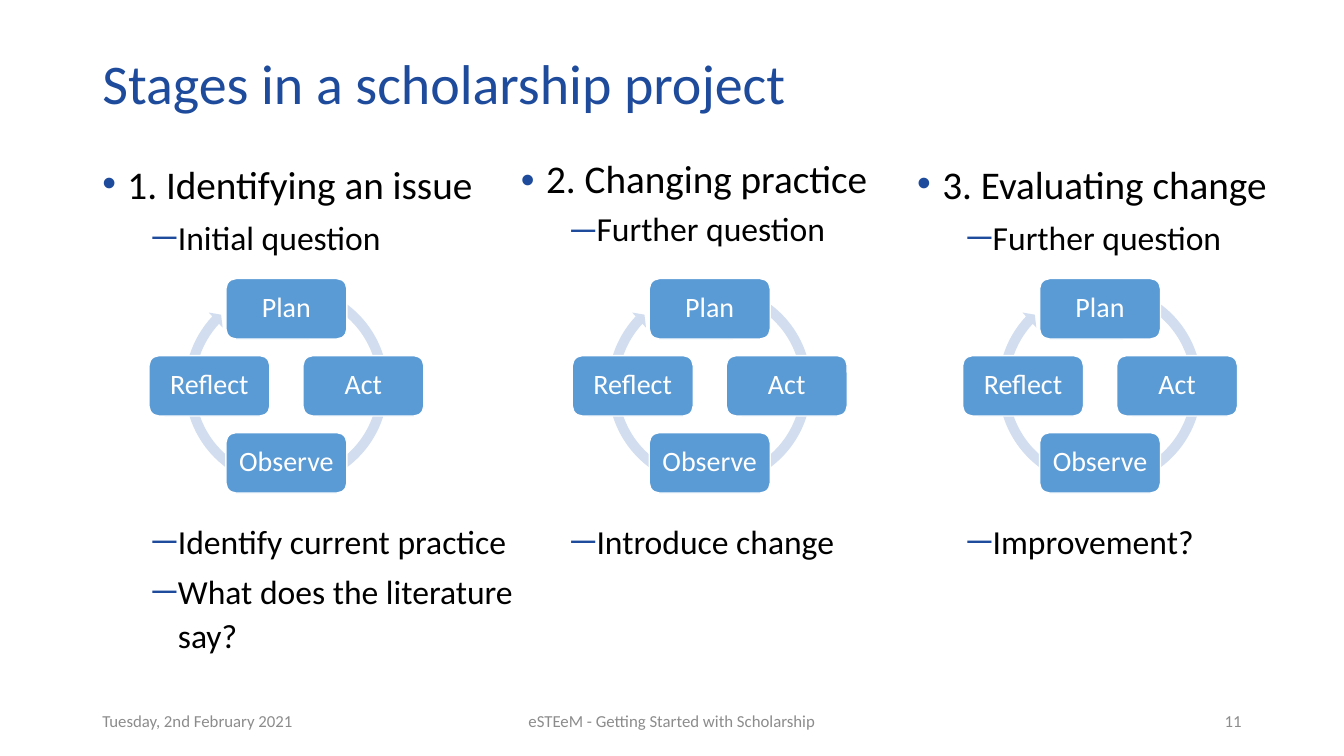
from dataclasses import dataclass

from lxml.etree import SubElement
from pptx import Presentation
from pptx.dml.color import RGBColor as RGB
from pptx.enum.shapes import MSO_SHAPE as SHAPE
from pptx.enum.text import MSO_ANCHOR as ANCHOR, PP_ALIGN as ALIGN
from pptx.oxml.ns import qn
from pptx.util import Pt


@dataclass(frozen=True)
class Theme:
    """Colours, font and type sizes of the slide."""
    font: str = "Calibri"
    blue: str = "1E4B9B"
    text: str = "000000"
    footer: str = "8C8C8C"
    node: str = "5B9BD5"
    ring: str = "D2DEEF"
    white: str = "FFFFFF"
    title_size: float = 40
    head_size: float = 28
    item_size: float = 24
    node_size: float = 20
    footer_size: float = 12


@dataclass(frozen=True)
class Box:
    """Position and size in points."""
    left: float
    top: float
    width: float
    height: float

    def lengths(self) -> tuple:
        """Return the four values as lengths."""
        return Pt(self.left), Pt(self.top), Pt(self.width), Pt(self.height)


@dataclass(frozen=True)
class Bullet:
    """Look of one outline level."""
    char: str
    indent: float
    before: float
    size: float


@dataclass(frozen=True)
class Stage:
    """One column: heading, question, cycle and closing items."""
    head: str
    question: str
    items: tuple
    head_box: Box
    items_box: Box
    cycle_x: float
    spacing: float = 1.08


@dataclass(frozen=True)
class Footer:
    """One entry in the footer row."""
    text: str
    left: float
    width: float
    align: ALIGN


@dataclass(frozen=True)
class Node:
    """A cycle step and its direction from the centre."""
    text: str
    dx: int
    dy: int


THEME = Theme()
LEVELS = (Bullet("•", 18, 10, THEME.head_size), Bullet("─", 54, 5, THEME.item_size))
HANGING = 18
CYCLE_Y, RADIUS, RING_SIDE = 275.6, 55, 152.6
NODE_W, NODE_H = 86.4, 43.2
RING_ADJUST = (0.04668, 2.729, 133.752, 176.718, 0.048)
NODES = (Node("Plan", 0, -1), Node("Act", 1, 0), Node("Observe", 0, 1), Node("Reflect", -1, 0))
STAGES = (
    Stage("1. Identifying an issue", "Initial question",
          ("Identify current practice", "What does the literature say?"),
          Box(66, 108, 299, 78), Box(66, 366, 314, 130), 204.6),
    Stage("2. Changing practice", "Further question", ("Introduce change",),
          Box(365, 108.6, 264, 78), Box(365, 366, 264, 44.6), 507, 0.98),
    Stage("3. Evaluating change", "Further question", ("Improvement?",),
          Box(648, 108, 273, 78), Box(648, 366, 273, 42.5), 785.8),
)
FOOTERS = (
    Footer("Tuesday, 2nd February 2021", 66, 216, ALIGN.LEFT),
    Footer("eSTEeM - Getting Started with Scholarship", 318, 324, ALIGN.CENTER),
    Footer("11", 678, 216, ALIGN.RIGHT),
)


def style(p, size: float, color: str) -> None:
    """Format the runs of a paragraph."""
    for r in p.runs:
        r.font.name = THEME.font
        r.font.size = Pt(size)
        r.font.color.rgb = RGB.from_string(color)


def add_bullet(p, bullet: Bullet) -> None:
    """Give a paragraph a coloured bullet and hanging indent."""
    pPr = p._p.get_or_add_pPr()
    pPr.set("marL", str(Pt(bullet.indent)))
    pPr.set("indent", str(-Pt(HANGING)))
    color = SubElement(pPr, qn("a:buClr"))
    SubElement(color, qn("a:srgbClr"), val=THEME.blue)
    SubElement(pPr, qn("a:buFont"), typeface="Arial")
    SubElement(pPr, qn("a:buChar"), char=bullet.char)


def add_outline(s, box: Box, lines: list, spacing: float) -> None:
    """Add a box of (level, text) lines."""
    tf = s.shapes.add_textbox(*box.lengths()).text_frame
    tf.word_wrap = True
    for i, (level, text) in enumerate(lines):
        p = tf.add_paragraph() if i else tf.paragraphs[0]
        bullet = LEVELS[level]
        p.text = text
        p.level = level
        p.line_spacing = spacing
        p.space_before = Pt(bullet.before if i else 0)
        add_bullet(p, bullet)
        style(p, bullet.size, THEME.text)


def add_filled(group, kind: SHAPE, box: Box, color: str):
    """Add a flat filled shape to a group."""
    sp = group.shapes.add_shape(kind, *box.lengths())
    sp.shadow.inherit = False
    sp.fill.solid()
    sp.fill.fore_color.rgb = RGB.from_string(color)
    return sp


def add_cycle(s, x: float) -> None:
    """Add a four-step cycle centred on x."""
    group = s.shapes.add_group_shape()
    half = RING_SIDE / 2
    ring = add_filled(group, SHAPE.CIRCULAR_ARROW,
                      Box(x - half, CYCLE_Y - half, RING_SIDE, RING_SIDE), THEME.ring)
    ring.line.fill.background()
    for i, value in enumerate(RING_ADJUST):
        ring.adjustments[i] = value
    for node in NODES:
        box = Box(x + node.dx * RADIUS - NODE_W / 2, CYCLE_Y + node.dy * RADIUS - NODE_H / 2,
                  NODE_W, NODE_H)
        sp = add_filled(group, SHAPE.ROUNDED_RECTANGLE, box, THEME.node)
        sp.line.color.rgb = RGB.from_string(THEME.white)
        sp.line.width = Pt(1)
        tf = sp.text_frame
        tf.margin_left = tf.margin_right = tf.margin_top = tf.margin_bottom = Pt(5)
        tf.vertical_anchor = ANCHOR.MIDDLE
        tf.word_wrap = True
        p = tf.paragraphs[0]
        p.text = node.text
        p.alignment = ALIGN.CENTER
        p.line_spacing = 0.9
        style(p, THEME.node_size, THEME.white)


def add_title(s, text: str) -> None:
    """Place and format the title placeholder."""
    sp = s.shapes.title
    sp.left, sp.top, sp.width, sp.height = Box(66, 29, 828, 65).lengths()
    tf = sp.text_frame
    tf.text = text
    tf.vertical_anchor = ANCHOR.MIDDLE
    p = tf.paragraphs[0]
    p.alignment = ALIGN.LEFT
    p.line_spacing = 0.9
    style(p, THEME.title_size, THEME.blue)


def add_footer(s, footer: Footer) -> None:
    """Add one footer entry."""
    tf = s.shapes.add_textbox(*Box(footer.left, 500.5, footer.width, 28.8).lengths()).text_frame
    tf.word_wrap = True
    tf.vertical_anchor = ANCHOR.MIDDLE
    p = tf.paragraphs[0]
    p.text = footer.text
    p.alignment = footer.align
    style(p, THEME.footer_size, THEME.footer)


def main() -> None:
    """Build and save the slide."""
    prs = Presentation()
    prs.slide_width, prs.slide_height = Pt(960), Pt(540)
    s = prs.slides.add_slide(prs.slide_layouts[5])
    add_title(s, "Stages in a scholarship project")
    for stage in STAGES:
        add_outline(s, stage.head_box, [(0, stage.head), (1, stage.question)], stage.spacing)
        add_cycle(s, stage.cycle_x)
        add_outline(s, stage.items_box, [(1, item) for item in stage.items], 1.08)
    for footer in FOOTERS:
        add_footer(s, footer)
    prs.save("out.pptx")


if __name__ == "__main__":
    main()
